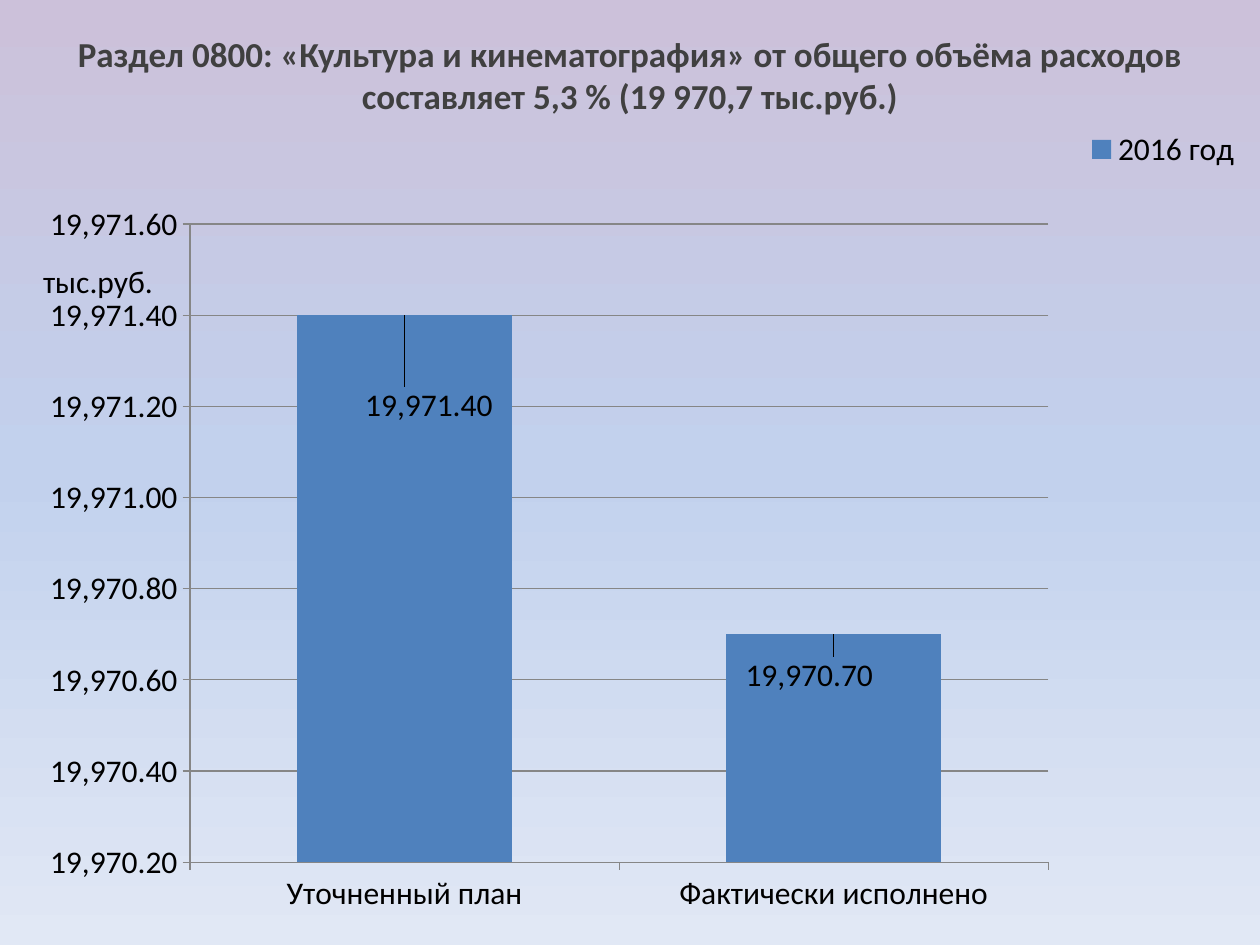
"""Build the slide on culture and cinematography spending."""
from copy import deepcopy

from pptx import Presentation
from pptx.chart.data import CategoryChartData
from pptx.dml.color import RGBColor
from pptx.enum.chart import XL_CHART_TYPE, XL_LABEL_POSITION, XL_LEGEND_POSITION, XL_TICK_MARK
from pptx.enum.text import PP_ALIGN
from pptx.oxml import parse_xml
from pptx.oxml.ns import nsdecls, qn
from pptx.util import Pt

HEADING = ("Раздел 0800: «Культура и кинематография» от общего объёма расходов "
           "составляет 5,3 % (19 970,7 тыс.руб.)")
UNIT = "тыс.руб."
SERIES_NAME = "2016 год"
SPENDING = {"Уточненный план": 19971.4, "Фактически исполнено": 19970.7}
LABEL_OFFSETS = [(0.02, 0.14), (-0.02, 0.08)]
NUMBER_FORMAT = "#,##0.00"
FONT = "Calibri"

BLACK = RGBColor(0x00, 0x00, 0x00)
DARK_GRAY = RGBColor(0x40, 0x40, 0x40)
GRAY = RGBColor(0x86, 0x86, 0x86)
BLUE = RGBColor(0x4F, 0x81, 0xBD)
BACKGROUND = [
    (0, RGBColor(0xCC, 0xC1, 0xDA)),
    (0.5, RGBColor(0xC2, 0xD1, 0xED)),
    (1, RGBColor(0xE1, 0xE8, 0xF5)),
]


def paint_background(slide):
    fill = slide.background.fill
    fill.gradient()
    fill.gradient_angle = 270
    first = next(slide.element.iter(qn("a:gs")))
    first.addnext(deepcopy(first))
    for stop, (position, color) in zip(slide.background.fill.gradient_stops, BACKGROUND):
        stop.position = position
        stop.color.rgb = color


def style_font(font, size, color, bold):
    font.name = FONT
    font.size = Pt(size)
    font.bold = bold
    font.color.rgb = color


def add_heading(slide):
    box = slide.shapes.add_textbox(Pt(20), Pt(15), Pt(680), Pt(40))
    box.text_frame.word_wrap = True
    paragraph = box.text_frame.paragraphs[0]
    paragraph.text = HEADING
    paragraph.alignment = PP_ALIGN.CENTER
    style_font(paragraph.font, 20, DARK_GRAY, True)


def set_layout(element, index, **settings):
    for layout in element.findall(qn("c:layout")):
        element.remove(layout)
    values = "".join(f'<c:{name} val="{value}"/>' for name, value in settings.items())
    element.insert(index, parse_xml(
        f'<c:layout {nsdecls("c")}><c:manualLayout>{values}</c:manualLayout></c:layout>'))


def style_line(line):
    line.color.rgb = GRAY
    line.width = Pt(0.75)


def style_axis(axis):
    axis.major_tick_mark = XL_TICK_MARK.OUTSIDE
    axis.minor_tick_mark = XL_TICK_MARK.NONE
    style_line(axis.format.line)


def add_spending_chart(slide):
    data = CategoryChartData(number_format=NUMBER_FORMAT)
    data.categories = list(SPENDING)
    data.add_series(SERIES_NAME, list(SPENDING.values()))
    chart = slide.shapes.add_chart(
        XL_CHART_TYPE.COLUMN_CLUSTERED, Pt(14.4), Pt(66.24), Pt(697.7), Pt(465.1), data).chart
    style_font(chart.font, 18, BLACK, False)

    chart.has_title = True
    title = chart.chart_title.text_frame.paragraphs[0]
    title.text = UNIT
    style_font(title.font, 18, BLACK, False)

    chart.has_legend = True
    chart.legend.position = XL_LEGEND_POSITION.CORNER
    chart.legend.include_in_layout = False

    style_axis(chart.category_axis)
    value_axis = chart.value_axis
    style_axis(value_axis)
    value_axis.minimum_scale = 19970.2
    value_axis.maximum_scale = 19971.6
    value_axis.major_unit = 0.2
    value_axis.has_major_gridlines = True
    style_line(value_axis.major_gridlines.format.line)
    value_axis.tick_labels.number_format = NUMBER_FORMAT
    value_axis.tick_labels.number_format_is_linked = False

    plot = chart.plots[0]
    plot.gap_width = 100
    plot.vary_by_categories = False
    series = plot.series[0]
    series.format.fill.solid()
    series.format.fill.fore_color.rgb = BLUE
    labels = series.data_labels
    labels.show_value = True
    labels.number_format = NUMBER_FORMAT
    labels.number_format_is_linked = False
    for index in range(len(LABEL_OFFSETS)):
        series.points[index].data_label.position = XL_LABEL_POSITION.OUTSIDE_END

    root = chart.element
    for label, (x, y) in zip(root.iter(qn("c:dLbl")), LABEL_OFFSETS):
        set_layout(label, 1, x=x, y=y)
    set_layout(next(root.iter(qn("c:plotArea"))), 0, layoutTarget="inner",
               xMode="edge", yMode="edge", x=0.135, y=0.133, w=0.703, h=0.784)
    set_layout(next(root.iter(qn("c:title"))), 1, xMode="edge", yMode="edge", x=0.01, y=0.17)
    set_layout(next(root.iter(qn("c:legend"))), 1, xMode="edge", yMode="edge", x=0.87, y=0.01)


def main():
    presentation = Presentation()
    presentation.slide_width = Pt(720)
    presentation.slide_height = Pt(540)
    slide = presentation.slides.add_slide(presentation.slide_layouts[6])
    paint_background(slide)
    add_heading(slide)
    add_spending_chart(slide)
    presentation.save("out.pptx")


if __name__ == "__main__":
    main()
